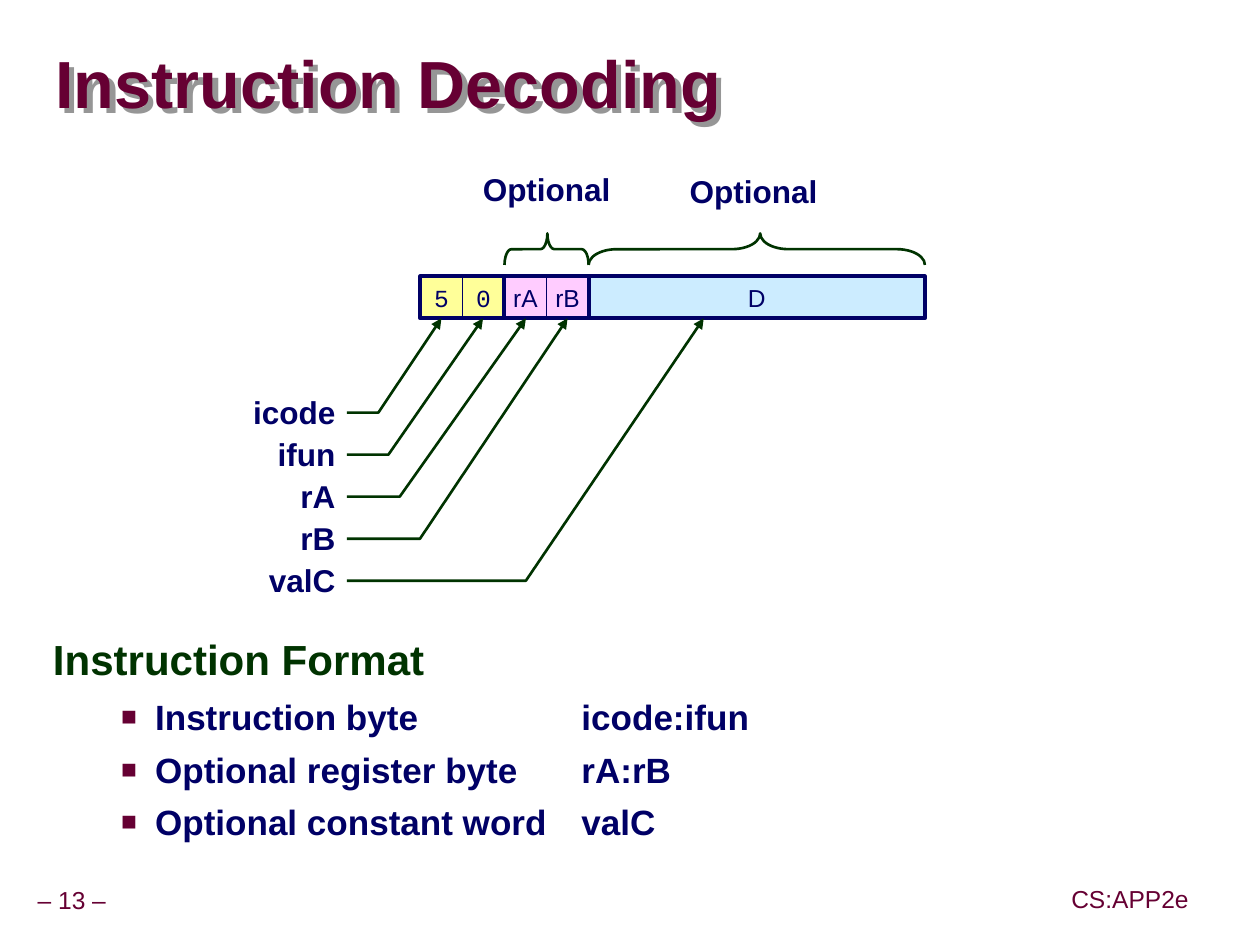
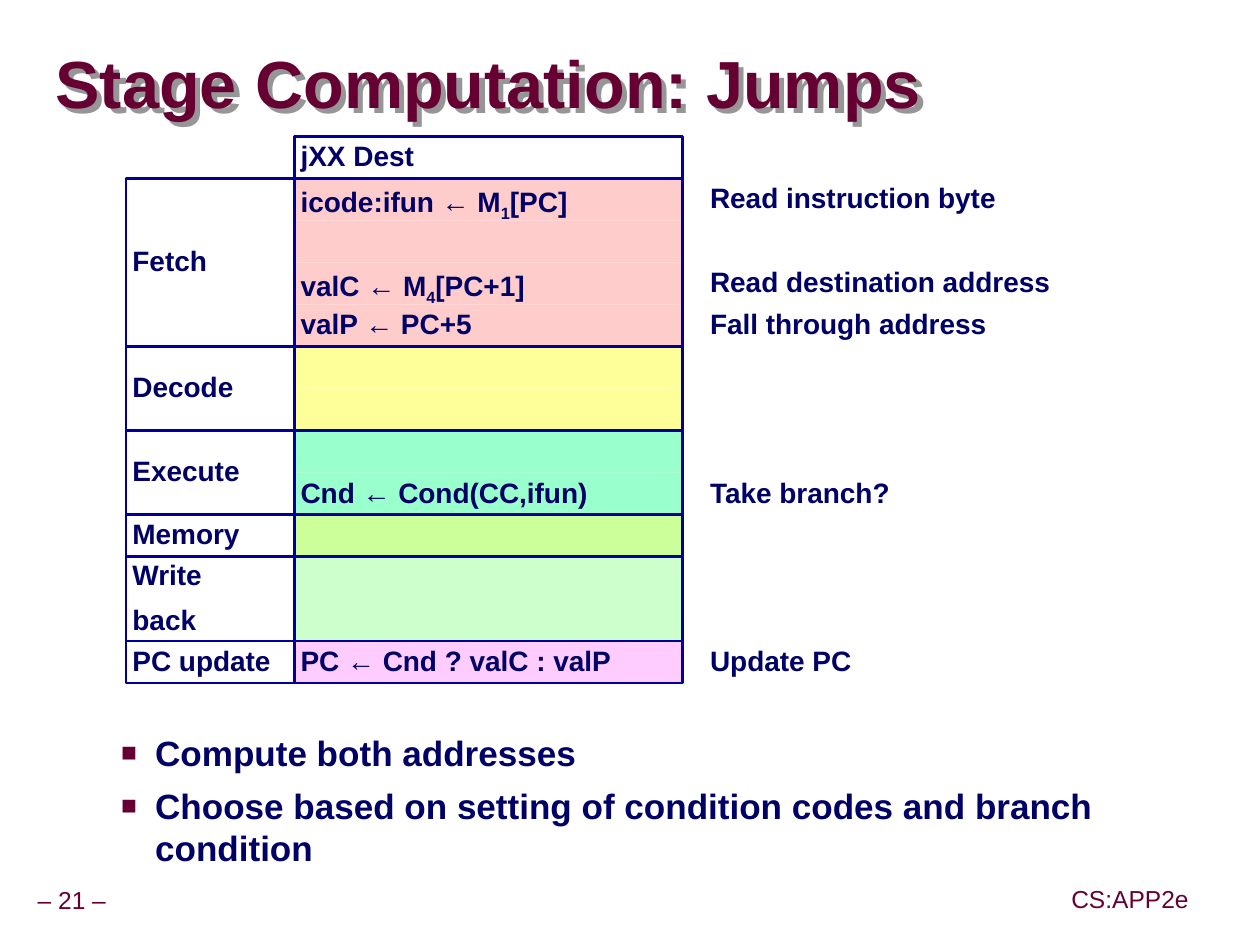
import pptx
import pptx.dml.color
import pptx.enum.shapes
import pptx.enum.text
import pptx.oxml.ns
import pptx.util
from lxml import etree

Inches = pptx.util.Inches
Pt = pptx.util.Pt
SHAPE = pptx.enum.shapes.MSO_SHAPE
ALIGN = pptx.enum.text.PP_ALIGN
ANCHOR = pptx.enum.text.MSO_ANCHOR

COLORS = {
    "maroon": "660033", "shadow": "969696", "green": "003300",
    "navy": "000066", "border": "000099", "yellow": "FFFF99",
    "pink": "FFCCFF", "sky": "CCECFF", "rose": "FFCCCC",
    "mint": "99FFCC", "lime": "CCFF99", "pale": "CCFFCC",
}
UNIT = 1 / 3  # side of one instruction field and height of one table row


def rgb(name):
    return pptx.dml.color.RGBColor.from_string(COLORS[name])


def add_xml(parent, tag, **attributes):
    return etree.SubElement(parent, pptx.oxml.ns.qn(tag), attributes)


def write(shape, text, size=16, color="navy", bold=True, font="Arial",
          align=ALIGN.LEFT, anchor=ANCHOR.TOP, inset=0.05, wrap=True,
          spacing=0.9, before=8.5):
    """Fill a shape with one paragraph a line; text between underscores is subscript."""
    frame = shape.text_frame
    frame.auto_size = pptx.enum.text.MSO_AUTO_SIZE.NONE
    frame.word_wrap = wrap
    frame.vertical_anchor = anchor
    frame.margin_left = frame.margin_right = Inches(inset)
    frame.margin_top = frame.margin_bottom = Inches(min(inset, 0.05))
    for number, line in enumerate(text.split("\n")):
        paragraph = frame.add_paragraph() if number else frame.paragraphs[0]
        paragraph.alignment = align
        paragraph.line_spacing = spacing
        paragraph.space_before = Pt(before if number else 0)
        for index, part in enumerate(line.split("_")):
            run = paragraph.add_run()
            run.text = part
            run.font.name = font
            run.font.size = Pt(size)
            run.font.bold = bold
            run.font.color.rgb = rgb(color)
            if index % 2:
                run._r.get_or_add_rPr().set("baseline", "-25000")


class Deck:
    def __init__(self):
        self.presentation = pptx.Presentation()
        self.presentation.slide_width = Inches(9.99)
        self.presentation.slide_height = Inches(7.49)
        self.slide = None

    def start_slide(self, title, number):
        layout = self.presentation.slide_layouts[1]
        self.slide = self.presentation.slides.add_slide(layout)
        heading = self.slide.shapes.title
        self.place(heading, 0.44, 0.27, 9.52, 0.85)
        write(heading, title, size=38, color="maroon", anchor=ANCHOR.MIDDLE,
              inset=0, spacing=0.87)
        effects = add_xml(heading._element.spPr, "a:effectLst")
        shadow = add_xml(effects, "a:outerShdw", dist="53882", dir="2700000",
                         algn="ctr", rotWithShape="0")
        add_xml(shadow, "a:srgbClr", val=COLORS["shadow"])
        footer = dict(size=14, color="maroon", bold=False, align=ALIGN.CENTER,
                      anchor=ANCHOR.MIDDLE, wrap=False)
        self.label(f"– {number} –", 0.24, 6.99, 0.66, 0.31, **footer)
        self.label("CS:APP2e", 8.44, 6.98, 1.04, 0.31, **footer)

    def place(self, shape, left, top, width, height):
        shape.left, shape.top = Inches(left), Inches(top)
        shape.width, shape.height = Inches(width), Inches(height)

    def label(self, text, left, top, width, height, **style):
        label = self.slide.shapes.add_textbox(
            Inches(left), Inches(top), Inches(width), Inches(height))
        write(label, text, **style)

    def paint(self, shape, fill, line, weight):
        shape.shadow.inherit = False
        if fill:
            shape.fill.solid()
            shape.fill.fore_color.rgb = rgb(fill)
        else:
            shape.fill.background()
        if line:
            shape.line.color.rgb = rgb(line)
            shape.line.width = Pt(weight)
        else:
            shape.line.fill.background()

    def box(self, left, top, width, height, text="", fill=None, line=None,
            weight=1.5, **style):
        box = self.slide.shapes.add_shape(
            SHAPE.RECTANGLE, Inches(left), Inches(top), Inches(width), Inches(height))
        self.paint(box, fill, line, weight)
        if text:
            write(box, text, **style)

    def brace(self, left, top, width, height, curl):
        """Draw a brace that opens downward over the given area."""
        brace = self.slide.shapes.add_shape(
            SHAPE.LEFT_BRACE, Inches(left + (width - height) / 2),
            Inches(top + (height - width) / 2), Inches(height), Inches(width))
        brace.rotation = 90
        brace.adjustments[0] = curl
        brace.adjustments[1] = 0.49
        self.paint(brace, None, "green", 1.5)

    def pointer(self, *points):
        """Draw an open bent line with an arrowhead at its last point."""
        start, *rest = [(Inches(x), Inches(y)) for x, y in points]
        builder = self.slide.shapes.build_freeform(*start)
        builder.add_line_segments(rest, close=False)
        pointer = builder.convert_to_shape()
        self.paint(pointer, None, "green", 1.5)
        add_xml(pointer.line._get_or_add_ln(), "a:tailEnd", type="triangle")

    def body(self, top, height, bullets, heading=None, tab=None):
        body = self.slide.placeholders[1]
        self.place(body, 0.32, top, 9.07, height)
        lines = ([heading] if heading else []) + bullets
        write(body, "\n".join(lines), size=20, inset=0.1, spacing=1.0, before=6)
        for index, paragraph in enumerate(body.text_frame.paragraphs):
            is_heading = bool(heading) and index == 0
            properties = paragraph._p.get_or_add_pPr()
            indent, hang = (0.42, 0.42) if is_heading else (0.81, 0.27)
            properties.set("marL", str(Inches(indent)))
            properties.set("indent", str(-Inches(hang)))
            if is_heading:
                paragraph.line_spacing = 0.95
                paragraph.runs[0].font.size = Pt(24)
                paragraph.runs[0].font.color.rgb = rgb("green")
                add_xml(properties, "a:buNone")
            else:
                paragraph.level = 1
                bullet_color = add_xml(properties, "a:buClr")
                add_xml(bullet_color, "a:srgbClr", val=COLORS["maroon"])
                add_xml(properties, "a:buSzPct", val="75000")
                add_xml(properties, "a:buFont", typeface="Arial")
                add_xml(properties, "a:buChar", char="■")
            if tab:
                tabs = add_xml(properties, "a:tabLst")
                add_xml(tabs, "a:tab", pos=str(Inches(tab)), algn="l")


def instruction_decoding(deck):
    deck.start_slide("Instruction Decoding", 13)
    deck.body(5, 2.03, ["Instruction byte\ticode:ifun",
                        "Optional register byte\trA:rB",
                        "Optional constant word\tvalC"],
              heading="Instruction Format", tab=4.19)

    bar_left, bar_top = 10 * UNIT, 2.19
    field = dict(line="navy", size=14, bold=False, align=ALIGN.CENTER,
                 anchor=ANCHOR.MIDDLE, inset=0, wrap=False, spacing=1.0)
    instruction_bytes = [("50", "yellow", "Courier New"),
                         (("rA", "rB"), "pink", "Arial")]
    for index, (halves, fill, font) in enumerate(instruction_bytes):
        left = bar_left + 2 * index * UNIT
        for half, text in enumerate(halves):
            deck.box(left + half * UNIT, bar_top, UNIT, UNIT, text, fill=fill,
                     weight=0.5, font=font, **field)
        deck.box(left, bar_top, 2 * UNIT, UNIT, line="navy", weight=2.25)
    word_left = bar_left + 4 * UNIT
    deck.box(word_left, bar_top, 8 * UNIT, UNIT, "D", fill="sky", weight=2.25, **field)

    pointers = [("icode", 3, 3.5), ("ifun", 3.08, 3.83), ("rA", 3.17, 4.17),
                ("rB", 3.33, 4.5), ("valC", 4.17, 5.58)]
    for row, (name, bend, target) in enumerate(pointers):
        deck.label(name, 1.67, 3.1 + row * UNIT, 1.04, 0.37, size=18, align=ALIGN.RIGHT)
        height = 3.27 + row * UNIT
        deck.pointer((2.75, height), (bend, height), (target, bar_top + UNIT))

    deck.brace(bar_left + 2 * UNIT, 1.85, 2 * UNIT, 0.25, 0.22)
    deck.brace(word_left, 1.85, 8 * UNIT, 0.25, 0.89)
    for left, top in [(3.78, 1.33), (5.42, 1.35)]:
        deck.label("Optional", left, top, 1.11, 0.37, size=18,
                   align=ALIGN.CENTER, wrap=False)


def stage_computation(deck):
    deck.start_slide("Stage Computation: Jumps", 21)
    deck.body(5.75, 1.28, [
        "Compute both addresses",
        "Choose based on setting of condition codes and branch condition"])

    blank = ("", "")
    stages = [
        ("Fetch", "rose", [("icode:ifun ← M_1_[PC]", "Read instruction byte"),
                           blank,
                           ("valC ← M_4_[PC+1]", "Read destination address"),
                           ("valP ← PC+5", "Fall through address")]),
        ("Decode", "yellow", [blank, blank]),
        ("Execute", "mint", [blank, ("Cnd ← Cond(CC,ifun)", "Take branch?")]),
        ("Memory", "lime", [blank]),
        ("Write\nback", "pale", [blank, blank]),
        ("PC update", "pink", [("PC ← Cnd ? valC : valP", "Update PC")]),
    ]
    stage_left, stage_width = 1, 4 * UNIT
    step_left, step_width = stage_left + stage_width, 3.08
    top = 1.08
    deck.box(step_left, top, step_width, UNIT, "jXX Dest", line="border")
    top += UNIT
    for stage, fill, steps in stages:
        height = len(steps) * UNIT
        for row, (step, remark) in enumerate(steps):
            row_top = top + row * UNIT
            deck.box(step_left, row_top, step_width, UNIT, step, fill=fill)
            if remark:
                deck.label(remark, 5.58, row_top, step_width, UNIT)
        deck.box(step_left, top, step_width, height, line="border")
        deck.box(stage_left, top, stage_width, height, stage, line="border",
                 anchor=ANCHOR.MIDDLE)
        top += height


def main():
    deck = Deck()
    instruction_decoding(deck)
    stage_computation(deck)
    deck.presentation.save("out.pptx")


if __name__ == "__main__":
    main()
